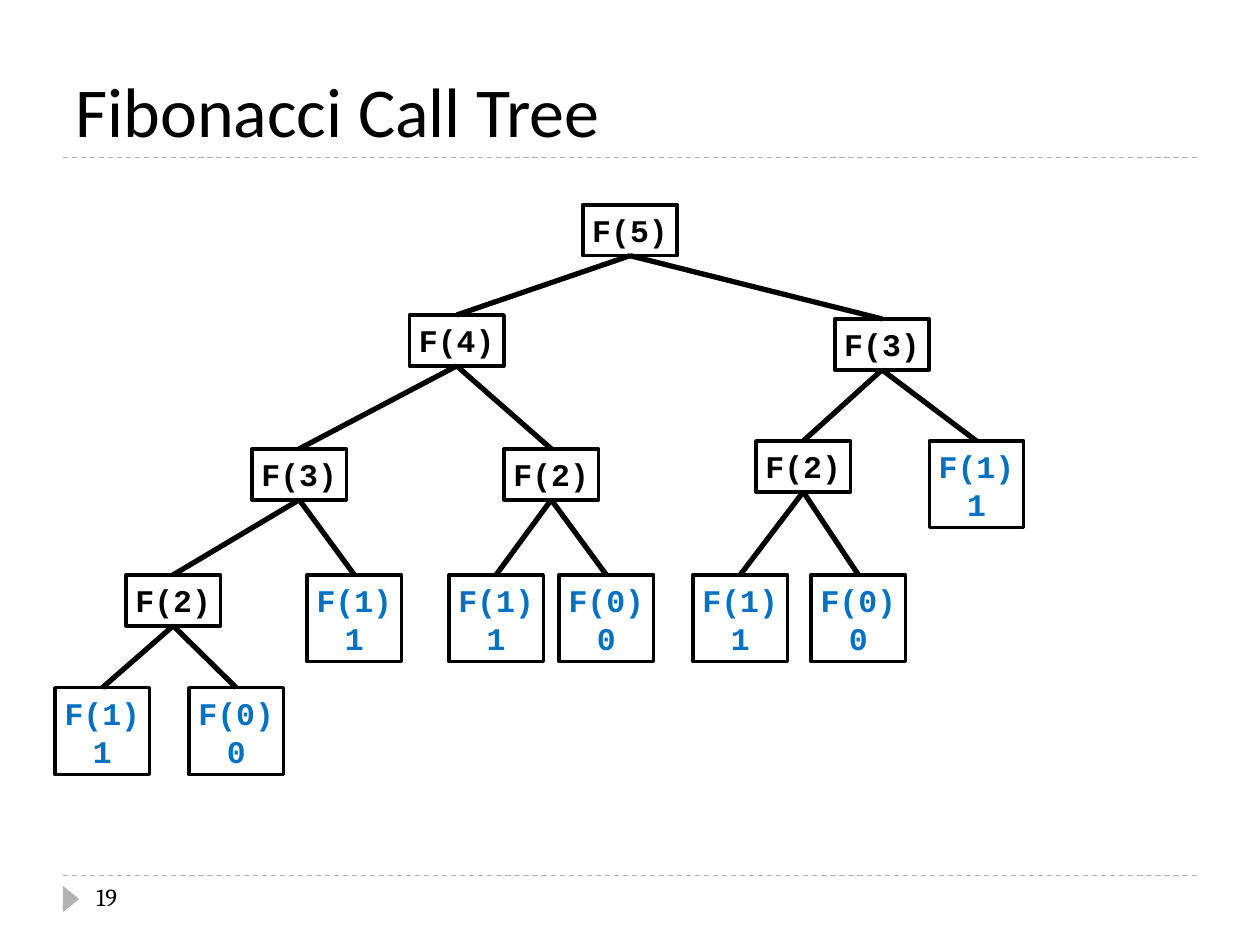
from dataclasses import dataclass

import pptx
import pptx.dml.color
import pptx.enum.dml
import pptx.enum.shapes
import pptx.enum.text
import pptx.util
from lxml import etree

Pt = pptx.util.Pt
SHAPES = pptx.enum.shapes.MSO_SHAPE
ANCHOR = pptx.enum.text.MSO_ANCHOR
COLOURS = {"ink": "000000", "base_case": "0070C0", "rule": "B2B2B2"}
BOX_WIDTH = 54
CALL_HEIGHT, BASE_HEIGHT = 29.1, 49.6
BOTTOM, TOP = 2, 0  # connection sites of a rectangle


@dataclass(frozen=True)
class Call:
    """One call F(n) with the top left corner of its box, in points."""
    n: int
    left: float
    top: float
    children: tuple["Call", ...] = ()


CALL_TREE = Call(5, 333, 117, (
    Call(4, 234, 180, (
        Call(3, 144, 256.5, (
            Call(2, 72, 328.5, (Call(1, 31.5, 393), Call(0, 108, 393))),
            Call(1, 175.5, 328.5),
        )),
        Call(2, 288, 256.5, (Call(1, 256.5, 328.5), Call(0, 319.5, 328.5))),
    )),
    Call(3, 477, 182.25, (
        Call(2, 432, 252, (Call(1, 396, 328.5), Call(0, 463.5, 328.5))),
        Call(1, 531, 252),
    )),
))


def rgb(name: str) -> pptx.dml.color.RGBColor:
    return pptx.dml.color.RGBColor.from_string(COLOURS[name])


def style_text(frame, font: str, size: float, colour: str, bold: bool = False) -> None:
    for para in frame.paragraphs:
        for span in para.runs:
            span.font.name = font
            span.font.size = Pt(size)
            span.font.bold = bold
            span.font.color.rgb = rgb(colour)


def add_line(page, start: tuple, end: tuple, colour: str, width: float):
    line = page.shapes.add_connector(
        pptx.enum.shapes.MSO_CONNECTOR.STRAIGHT, *map(Pt, start + end))
    line.line.color.rgb = rgb(colour)
    line.line.width = Pt(width)
    etree.SubElement(line._element.spPr, pptx.oxml.ns.qn("a:effectLst"))
    return line


def add_rule(page, y: float) -> None:
    rule = add_line(page, (36, y), (684, y), "rule", 0.75)
    rule.line.dash_style = pptx.enum.dml.MSO_LINE.DASH


def add_label(page, text: str, bounds: tuple, font: str, size: float, anchor) -> None:
    box = page.shapes.add_textbox(*map(Pt, bounds))
    frame = box.text_frame
    frame.word_wrap = True
    frame.vertical_anchor = anchor
    frame.text = text
    style_text(frame, font, size, "ink")


def add_page_marker(page) -> None:
    marker = page.shapes.add_shape(
        SHAPES.ISOSCELES_TRIANGLE, Pt(33.1), Pt(509), Pt(15), Pt(9.4))
    marker.rotation = 90
    marker.shadow.inherit = False
    marker.fill.solid()
    marker.fill.fore_color.rgb = rgb("rule")
    marker.line.fill.background()


def add_call_box(page, call: Call):
    """Draw a call; a base case also shows its value, which equals n."""
    is_base = not call.children
    box = page.shapes.add_shape(
        SHAPES.RECTANGLE, Pt(call.left), Pt(call.top), Pt(BOX_WIDTH),
        Pt(BASE_HEIGHT if is_base else CALL_HEIGHT))
    box.shadow.inherit = False
    box.fill.background()
    box.line.color.rgb = rgb("ink")
    box.line.width = Pt(2)
    frame = box.text_frame
    frame.word_wrap = False
    frame.vertical_anchor = ANCHOR.TOP
    frame.text = f"F({call.n})\n{call.n}" if is_base else f"F({call.n})"
    for para in frame.paragraphs:
        para.alignment = pptx.enum.text.PP_ALIGN.CENTER
    style_text(frame, "Courier New", 18, "base_case" if is_base else "ink", bold=True)
    return box


def add_branch(page, parent, child) -> None:
    branch = add_line(page, (0, 0), (0, 0), "ink", 3)
    branch.begin_connect(parent, BOTTOM)
    branch.end_connect(child, TOP)


def add_call_tree(page, call: Call):
    """Draw a call with everything below it and return its box."""
    box = add_call_box(page, call)
    for child in call.children:
        add_branch(page, box, add_call_tree(page, child))
    return box


def main() -> None:
    deck = pptx.Presentation()
    deck.slide_width, deck.slide_height = Pt(720), Pt(540)
    page = deck.slides.add_slide(deck.slide_layouts[6])
    for y in (500.4, 90):
        add_rule(page, y)
    add_page_marker(page)
    add_label(page, "Fibonacci Call Tree", (36, 18, 648, 72), "Calibri", 40, ANCHOR.BOTTOM)
    add_label(page, "19", (48, 500.4, 156, 28.8), "Cambria", 14, ANCHOR.TOP)
    add_call_tree(page, CALL_TREE)
    deck.save("out.pptx")


if __name__ == "__main__":
    main()
